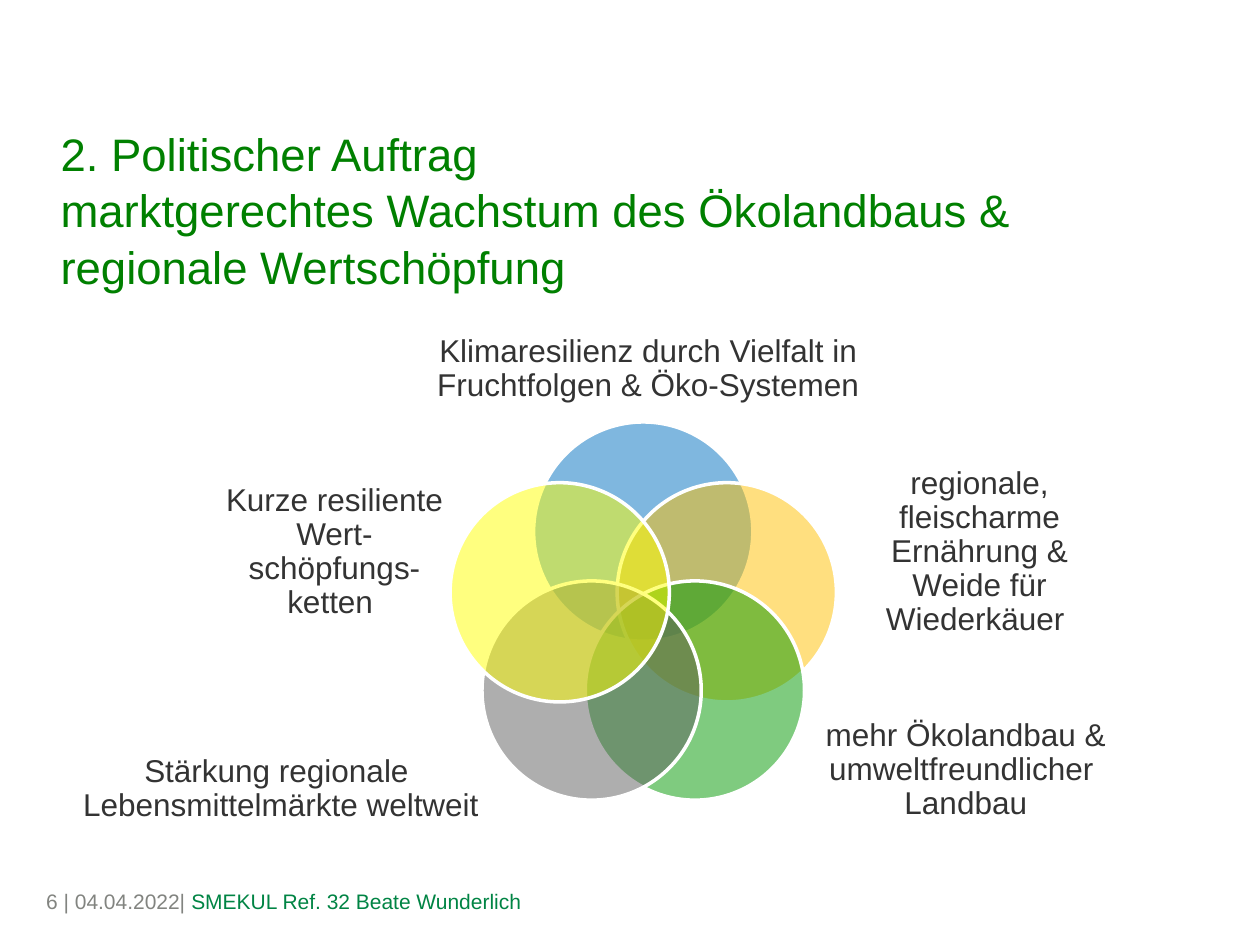
import math
from dataclasses import dataclass

from pptx import Presentation
from pptx.dml.color import RGBColor
from pptx.enum import shapes, text
from pptx.oxml.xmlchemy import OxmlElement
from pptx.util import Pt


@dataclass(frozen=True)
class Theme:
    font: str = "Arial"
    title_size: float = 26
    label_size: float = 18
    footer_size: float = 12
    title_color: str = "008000"
    label_color: str = "333333"
    footer_gray: str = "828480"
    footer_green: str = "008444"
    outline: str = "FFFFFF"
    blue: str = "0070C0"
    amber: str = "FFC000"
    green: str = "009900"
    gray: str = "5F5F5F"
    yellow: str = "FFFF00"


@dataclass(frozen=True)
class Box:
    left: float
    top: float
    width: float
    height: float

    def lengths(self) -> tuple:
        return Pt(self.left), Pt(self.top), Pt(self.width), Pt(self.height)


@dataclass(frozen=True)
class Goal:
    wording: str
    color: str
    label_box: Box


THEME = Theme()
VENN_CENTER = (367.6, 354)
VENN_RADIUS = 50.2
CIRCLE_SIZE = 125.3

GOALS = [
    Goal("Klimaresilienz durch Vielfalt in Fruchtfolgen & Öko-Systemen",
         THEME.blue, Box(221, 169.2, 298.8, 84.2)),
    Goal("regionale, fleischarme Ernährung & Weide für Wiederkäuer ",
         THEME.amber, Box(494.6, 270, 130.3, 91.4)),
    Goal("mehr Ökolandbau & umweltfreundlicher \vLandbau",
         THEME.green, Box(441.4, 394.6, 221, 91.4)),
    Goal("Stärkung regionale \vLebensmittelmärkte weltweit",
         THEME.gray, Box(30.2, 405.4, 260.6, 91.4)),
    Goal("Kurze resiliente Wert-schöpfungs-ketten ",
         THEME.yellow, Box(126, 267, 130.3, 97.2)),
]


def style_run(run, size: float, color: str) -> None:
    run.font.name = THEME.font
    run.font.size = Pt(size)
    run.font.color.rgb = RGBColor.from_string(color)


def add_text(slide, box: Box, wording: str, size: float, color: str,
             anchor=text.MSO_ANCHOR.MIDDLE, alignment=text.PP_ALIGN.LEFT,
             line_spacing: float = 1.0):
    """Add a wrapped text box without margins and return its paragraph."""
    frame = slide.shapes.add_textbox(*box.lengths()).text_frame
    frame.word_wrap = True
    frame.margin_left = frame.margin_right = 0
    frame.margin_top = frame.margin_bottom = 0
    frame.vertical_anchor = anchor
    frame.text = wording
    paragraph = frame.paragraphs[0]
    paragraph.alignment = alignment
    paragraph.line_spacing = line_spacing
    for run in paragraph.runs:
        style_run(run, size, color)
    return paragraph


def add_circle(slide, index: int, color: str) -> None:
    """Add a half-transparent circle at one corner of the pentagon."""
    angle = 2 * math.pi * index / len(GOALS)
    center_x = VENN_CENTER[0] + VENN_RADIUS * math.sin(angle)
    center_y = VENN_CENTER[1] - VENN_RADIUS * math.cos(angle)
    box = Box(center_x - CIRCLE_SIZE / 2, center_y - CIRCLE_SIZE / 2,
              CIRCLE_SIZE, CIRCLE_SIZE)
    circle = slide.shapes.add_shape(shapes.MSO_SHAPE.OVAL, *box.lengths())
    circle.shadow.inherit = False
    circle.fill.solid()
    circle.fill.fore_color.rgb = RGBColor.from_string(color)
    alpha = OxmlElement("a:alpha")
    alpha.set("val", "50000")
    circle.fill._xPr.find(".//{*}srgbClr").append(alpha)
    circle.line.color.rgb = RGBColor.from_string(THEME.outline)
    circle.line.width = Pt(2)


def add_goal(slide, index: int, goal: Goal) -> None:
    add_circle(slide, index, goal.color)
    add_text(slide, goal.label_box, goal.wording, THEME.label_size,
             THEME.label_color, alignment=text.PP_ALIGN.CENTER,
             line_spacing=0.9)


def add_footer(slide) -> None:
    paragraph = add_text(slide, Box(26.4, 490.3, 656.9, 49.7),
                         "6 | 04.04.2022|", THEME.footer_size,
                         THEME.footer_gray)
    author = paragraph.add_run()
    author.text = " SMEKUL Ref. 32 Beate Wunderlich"
    style_run(author, THEME.footer_size, THEME.footer_green)


def main() -> None:
    presentation = Presentation()
    presentation.slide_width, presentation.slide_height = Pt(720), Pt(540)
    slide = presentation.slides.add_slide(presentation.slide_layouts[6])
    add_footer(slide)
    add_text(slide, Box(34.6, 34.6, 597.6, 133.2),
             "2. Politischer Auftrag\v"
             "marktgerechtes Wachstum des Ökolandbaus &\v"
             "regionale Wertschöpfung",
             THEME.title_size, THEME.title_color,
             anchor=text.MSO_ANCHOR.BOTTOM, line_spacing=1.04)
    for index, goal in enumerate(GOALS):
        add_goal(slide, index, goal)
    presentation.save("out.pptx")


if __name__ == "__main__":
    main()
